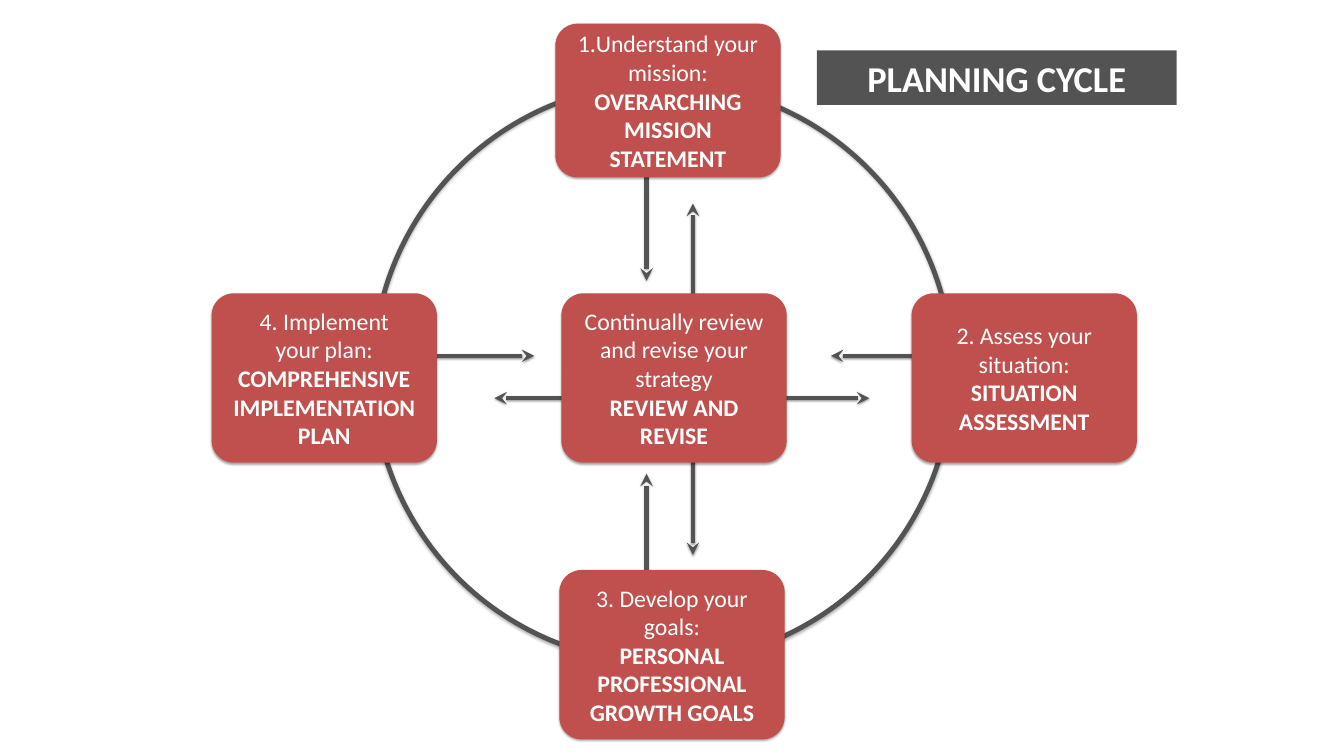
from lxml import etree
from pptx import Presentation
from pptx.dml.color import RGBColor
from pptx.enum.shapes import MSO_CONNECTOR, MSO_SHAPE
from pptx.enum.text import MSO_ANCHOR, MSO_AUTO_SIZE, PP_ALIGN
from pptx.oxml import parse_xml
from pptx.oxml.ns import nsdecls, qn
from pptx.util import Inches, Pt

STRAIGHT = MSO_CONNECTOR.STRAIGHT
OVAL, ROUNDED = MSO_SHAPE.OVAL, MSO_SHAPE.ROUNDED_RECTANGLE
MIDDLE, CENTER, NO_AUTOFIT = MSO_ANCHOR.MIDDLE, PP_ALIGN.CENTER, MSO_AUTO_SIZE.NONE
GRAY = RGBColor(0x53, 0x53, 0x53)
RED = RGBColor(0xC0, 0x50, 0x4D)
WHITE = RGBColor(0xFF, 0xFF, 0xFF)
FONT = "Calibri"


def add_shadow(shape, opacity, distance):
    """Give the shape a soft black shadow straight below it."""
    properties = shape._element.spPr
    for effects in properties.findall(qn("a:effectLst")):
        properties.remove(effects)
    properties.append(parse_xml(
        f'<a:effectLst {nsdecls("a")}>'
        f'<a:outerShdw blurRad="{Pt(3)}" dist="{Pt(distance)}" dir="5400000" rotWithShape="0">'
        f'<a:srgbClr val="000000"><a:alpha val="{opacity * 1000}"/></a:srgbClr>'
        '</a:outerShdw></a:effectLst>'))


def write_centered(shape, lines, size):
    """Write (text, bold) lines in white, centred both ways."""
    frame = shape.text_frame
    frame.word_wrap = True
    frame.auto_size = NO_AUTOFIT
    frame.vertical_anchor = MIDDLE
    frame.margin_left = frame.margin_right = Inches(0.1)
    frame.margin_top = frame.margin_bottom = 0
    frame.text = "\n".join(text for text, bold in lines)
    for paragraph, (text, bold) in zip(frame.paragraphs, lines):
        paragraph.alignment = CENTER
        font = paragraph.runs[0].font
        font.name, font.size, font.bold = FONT, Pt(size), bold
        font.color.rgb = WHITE


presentation = Presentation()
presentation.slide_width = Inches(26.67)
presentation.slide_height = Inches(15)
slide = presentation.slides.add_slide(presentation.slide_layouts[5])

title = slide.shapes.title
title.left, title.top = Inches(16.21), Inches(1)
title.width, title.height = Inches(7.14), Inches(1.08)
title.fill.solid()
title.fill.fore_color.rgb = GRAY
write_centered(title, [("PLANNING CYCLE", True)], 52)

# Each pair of arrows runs to and from the centre: x1, y1, x2, y2
arrows = [
    (11.36, 7.9, 9.81, 7.9),
    (8.53, 7.06, 10.6, 7.06),
    (13.75, 8.95, 13.75, 11.01),
    (13.75, 6.1, 13.75, 4.04),
    (14.75, 7.9, 17.25, 7.9),
    (18.56, 7.06, 16.49, 7.06),
    (12.83, 3.51, 12.83, 5.57),
    (12.83, 11.46, 12.83, 9.4),
]
for ends in arrows:
    arrow = slide.shapes.add_connector(STRAIGHT, *[Inches(value) for value in ends])
    arrow.line.color.rgb = GRAY
    arrow.line.width = Pt(6)
    outline = arrow._element.spPr.find(qn("a:ln"))
    etree.SubElement(outline, qn("a:tailEnd"), type="stealth")
    add_shadow(arrow, 38, 1.6)

ring = slide.shapes.add_shape(OVAL, Inches(7.4), Inches(1.65), Inches(11.5), Inches(11.5))
ring.fill.background()
ring.line.color.rgb = GRAY
ring.line.width = Pt(7)
add_shadow(ring, 35, 1.8)

CARD_WIDTH, CARD_HEIGHT, CORNER_RADIUS = 4.47, 3.36, 0.44
# left, top, height, lines
cards = [
    (11.02, 0.47, 3.05, [("1.Understand your mission:", False), ("OVERARCHING", True),
                         ("MISSION STATEMENT", True)]),
    (18.09, 5.82, CARD_HEIGHT, [("2. Assess your situation:", False),
                                ("SITUATION ASSESSMENT", True)]),
    (11.1, 11.31, CARD_HEIGHT, [("3. Develop your goals:", False),
                                ("PERSONAL PROFESSIONAL GROWTH GOALS", True)]),
    (4.2, 5.82, CARD_HEIGHT, [("4. Implement", False), ("your plan:", False),
                              ("COMPREHENSIVE IMPLEMENTATION PLAN", True)]),
    (11.14, 5.82, CARD_HEIGHT, [("Continually review and revise your strategy", False),
                                ("REVIEW AND REVISE", True)]),
]
for left, top, height, lines in cards:
    card = slide.shapes.add_shape(ROUNDED, Inches(left), Inches(top),
                                  Inches(CARD_WIDTH), Inches(height))
    card.adjustments[0] = CORNER_RADIUS / height
    card.fill.solid()
    card.fill.fore_color.rgb = RED
    card.line.fill.background()
    add_shadow(card, 35, 1.8)
    write_centered(card, lines, 34)

presentation.save("out.pptx")
